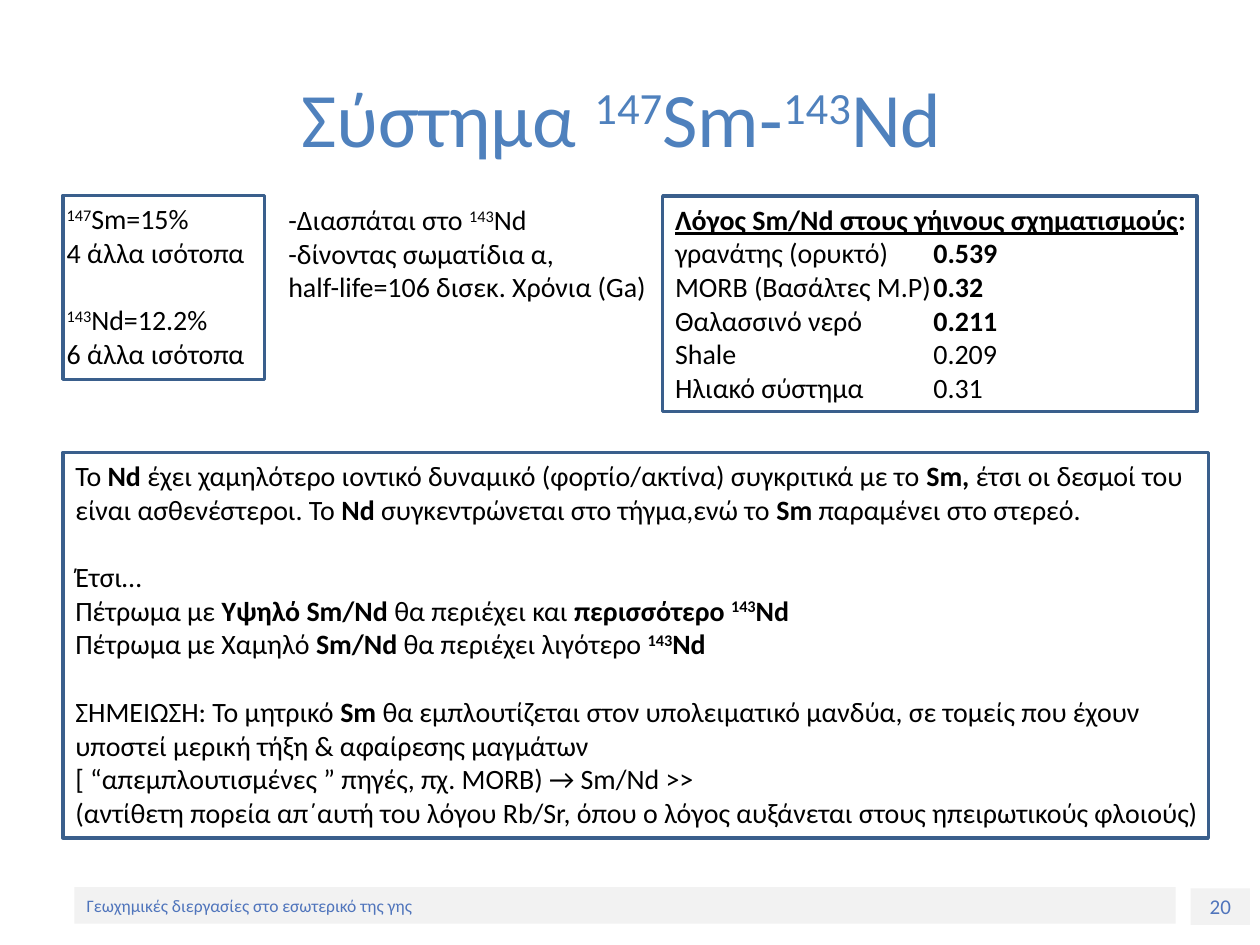
from lxml.etree import SubElement
from pptx import Presentation
from pptx.dml.color import RGBColor
from pptx.enum.shapes import MSO_SHAPE
from pptx.enum.text import MSO_ANCHOR, PP_ALIGN
from pptx.oxml.ns import qn
from pptx.util import Inches, Pt

BLACK = RGBColor(0x00, 0x00, 0x00)
TITLE_BLUE = RGBColor(0x4F, 0x81, 0xBD)
FOOTER_BLUE = RGBColor(0x50, 0x75, 0xBC)
FRAME_BLUE = RGBColor(0x3A, 0x5F, 0x8C)
BAND_GREY = RGBColor(0xF2, 0xF2, 0xF2)

# Markup: * bold, ^ superscript, _ underline, leading ¶ one line of space before
TITLE = ["Σύστημα ^147^Sm-^143^Nd "]
ABUNDANCES = ["^147^Sm=15%", "4 άλλα ισότοπα", "¶^143^Nd=12.2%", "6 άλλα ισότοπα"]
DECAY = [
    "-Διασπάται στο ^143^Nd",
    "-δίνοντας σωματίδια α,",
    "half-life=106 δισεκ. Χρόνια (Ga)",
]
RATIOS = [
    "*_Λόγος Sm/Nd στους γήινους σχηματισμούς_:*",
    "γρανάτης (ορυκτό)\t*0.539*",
    "MORB (Βασάλτες Μ.Ρ)\t*0.32*",
    "Θαλασσινό νερό\t*0.211*",
    "Shale\t0.209",
    "Ηλιακό σύστημα\t0.31",
]
EXPLANATION = [
    "Το *Nd* έχει χαμηλότερο ιοντικό δυναμικό (φορτίο/ακτίνα) συγκριτικά με το *Sm,* "
    "έτσι οι δεσμοί του είναι ασθενέστεροι. Το *Nd* συγκεντρώνεται στο τήγμα,ενώ το "
    "*Sm* παραμένει στο στερεό.",
    "¶Έτσι…",
    "Πέτρωμα με *Υψηλό Sm/Nd* θα περιέχει και *περισσότερο ^143^Nd*",
    "Πέτρωμα με Χαμηλό *Sm/Nd* θα περιέχει λιγότερο *^143^Nd*",
    "¶ΣΗΜΕΙΩΣΗ: Το μητρικό *Sm* θα εμπλουτίζεται στον υπολειματικό μανδύα, σε τομείς "
    "που έχουν υποστεί μερική τήξη & αφαίρεσης μαγμάτων",
    "[ “απεμπλουτισμένες ” πηγές, πχ. MORB) → Sm/Nd >>",
    "(αντίθετη πορεία απ΄αυτή του λόγου Rb/Sr, όπου ο λόγος αυξάνεται στους "
    "ηπειρωτικούς φλοιούς)",
]
FOOTER = ["Γεωχημικές διεργασίες στο εσωτερικό της γης"]
PAGE = ["20"]

BODY = {"size": 16, "color": BLACK}
CENTRED = {"align": PP_ALIGN.CENTER, "anchor": MSO_ANCHOR.MIDDLE}
BAND = {"fill": BAND_GREY, "color": FOOTER_BLUE, "anchor": MSO_ANCHOR.MIDDLE}

PARTS = [
    (PAGE, (94.5, 94, 4.7, 3.87), {**BAND, **CENTRED, "size": 12}),
    (FOOTER, (5.9, 93.87, 87.4, 3.87), {**BAND, "size": 10}),
    (TITLE, (5, 4, 90, 16.67), {**CENTRED, "size": 44, "color": TITLE_BLUE}),
    (ABUNDANCES, (5, 20.67, 16, 19.47), {**BODY, "frame": FRAME_BLUE, "inset": 0.03}),
    (DECAY, (21.9, 20.8, 30.8, 12.13), BODY),
    (RATIOS, (52.6, 20.75, 42.4, 22.8), {**BODY, "frame": FRAME_BLUE, "tab": 2.05}),
    (EXPLANATION, (5, 47.87, 90.9, 40.8), {**BODY, "frame": FRAME_BLUE}),
]
TOGGLES = {"*": "bold", "^": "superscript", "_": "underline"}
LINE_HEIGHT = 1.22


def styled_pieces(line):
    state = dict.fromkeys(TOGGLES.values(), False)
    piece = ""
    for letter in line:
        if letter in TOGGLES:
            if piece:
                yield piece, dict(state)
            piece = ""
            state[TOGGLES[letter]] = not state[TOGGLES[letter]]
        else:
            piece += letter
    if piece:
        yield piece, state


def write_line(paragraph, line, look):
    paragraph.alignment = look.get("align", PP_ALIGN.LEFT)
    if line.startswith("¶"):
        paragraph.space_before = Pt(round(look["size"] * LINE_HEIGHT, 1))
    if "tab" in look:
        stops = SubElement(paragraph._p.get_or_add_pPr(), qn("a:tabLst"))
        SubElement(stops, qn("a:tab"), pos=str(Inches(look["tab"])), algn="l")
    for piece, style in styled_pieces(line.removeprefix("¶")):
        run = paragraph.add_run()
        run.text = piece
        font_values = {"name": "Calibri", "size": Pt(look["size"]),
                       "bold": style["bold"], "underline": style["underline"]}
        for attribute, value in font_values.items():
            setattr(run.font, attribute, value)
        run.font.color.rgb = look["color"]
        if style["superscript"]:
            run._r.get_or_add_rPr().set("baseline", "30000")


def add_part(slide, lines, box, look):
    if "fill" in look or "frame" in look:
        part = slide.shapes.add_shape(MSO_SHAPE.RECTANGLE, *box)
        part.shadow.inherit = False
    else:
        part = slide.shapes.add_textbox(*box)
    if "fill" in look:
        part.fill.solid()
        part.fill.fore_color.rgb = look["fill"]
    else:
        part.fill.background()
    if "frame" in look:
        part.line.color.rgb = look["frame"]
        part.line.width = Pt(2)
    else:
        part.line.fill.background()
    frame_values = {"word_wrap": True, "margin_left": Inches(look.get("inset", 0.1)),
                    "margin_right": 0 if "frame" in look else Inches(0.1),
                    "vertical_anchor": look.get("anchor", MSO_ANCHOR.TOP)}
    for attribute, value in frame_values.items():
        setattr(part.text_frame, attribute, value)
    for index, line in enumerate(lines):
        paragraphs = part.text_frame
        write_line(paragraphs.add_paragraph() if index else paragraphs.paragraphs[0], line, look)


def main():
    deck = Presentation()
    deck.slide_width, deck.slide_height = Inches(10), Inches(7.5)
    slide = deck.slides.add_slide(deck.slide_layouts[6])
    extents = (deck.slide_width, deck.slide_height) * 2
    for lines, shares, look in PARTS:
        box = [round(extent * share / 100) for extent, share in zip(extents, shares)]
        add_part(slide, lines, box, look)
    deck.save("out.pptx")


if __name__ == "__main__":
    main()
